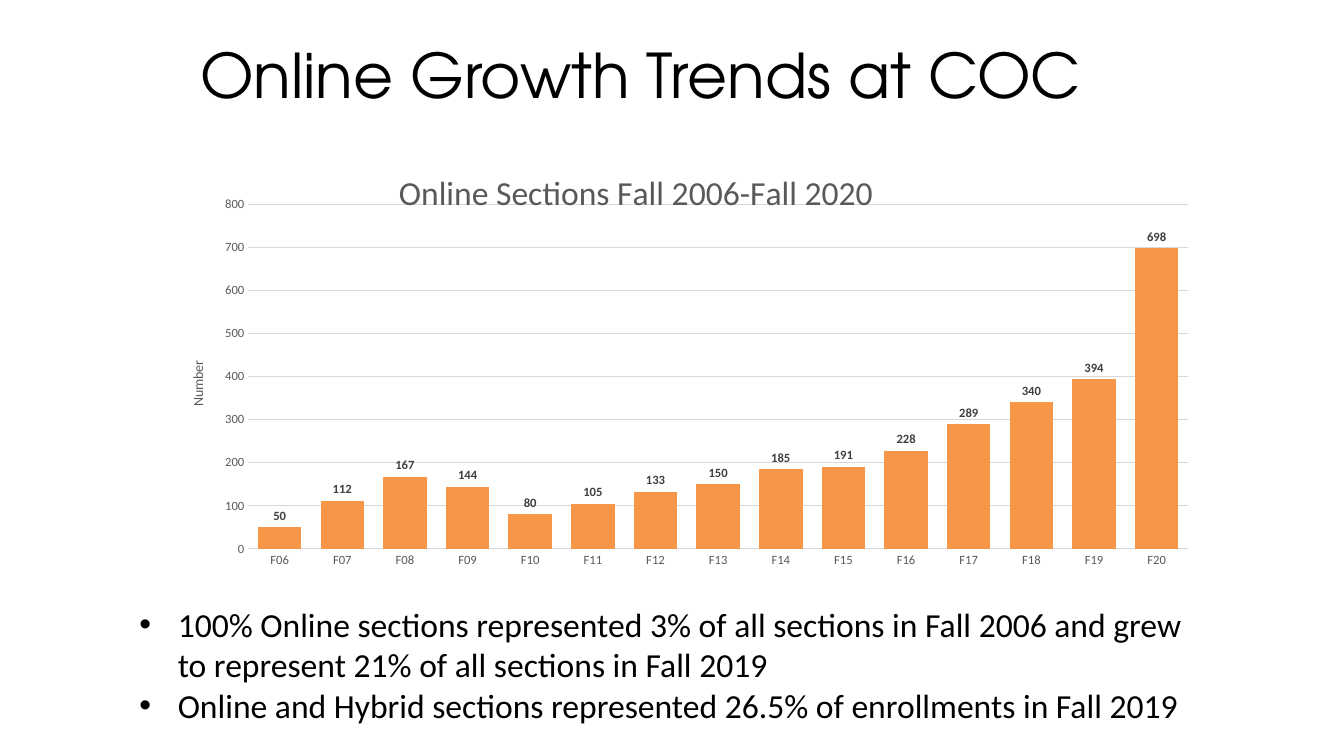
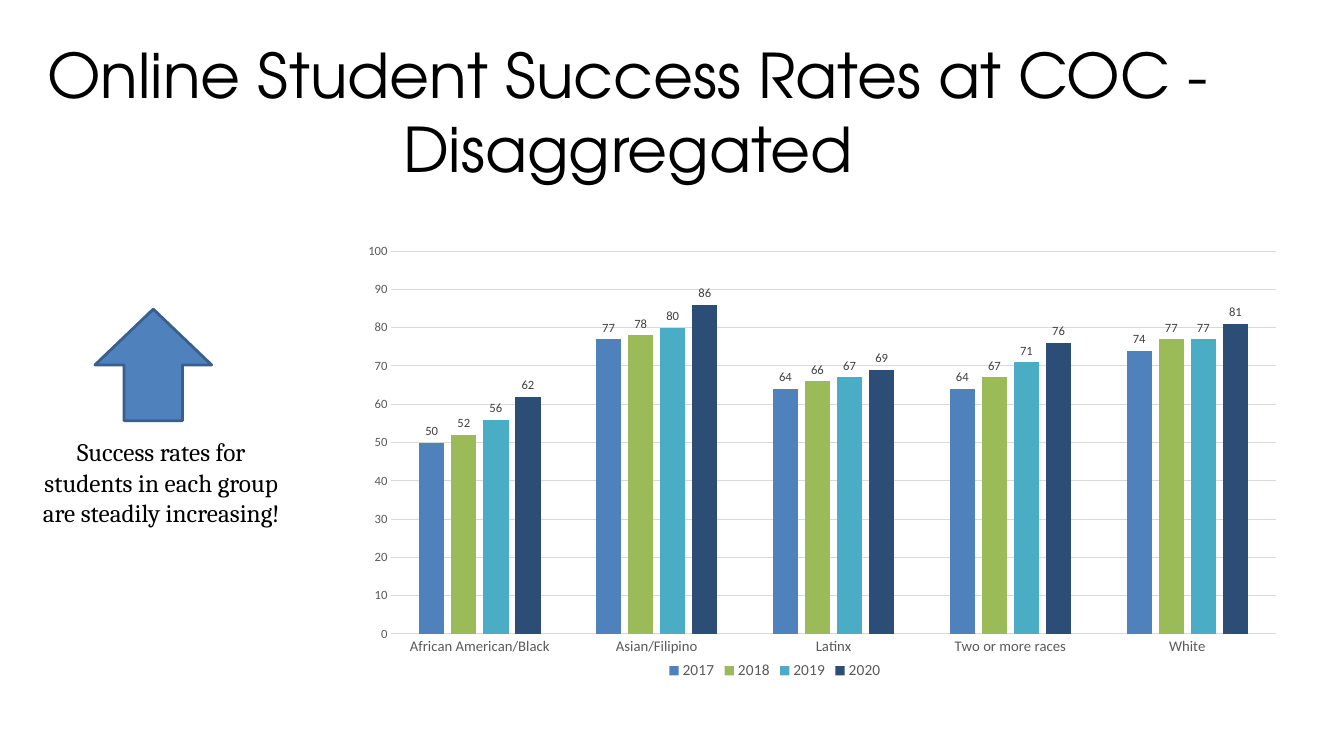
from dataclasses import dataclass
from typing import Any, Optional

from lxml import etree
from pptx import Presentation
from pptx import util as u
from pptx.chart.data import CategoryChartData
from pptx.dml.color import RGBColor
from pptx.enum import chart as ch, shapes, text
from pptx.oxml.ns import qn

WIDE, HIGH = u.Inches(13.33), u.Inches(7.5)
COLS, ROWS = 160, 90


@dataclass(frozen=True)
class Theme:
    """Colours, faces and type sizes that the slides share."""
    ink: str = "000000"
    grey: str = "595959"
    dark: str = "404040"
    rule: str = "D9D9D9"
    blue: str = "4F81BD"
    edge: str = "3A5F8C"
    green: str = "9BBB59"
    teal: str = "4BACC6"
    navy: str = "2C4D75"
    orange: str = "F79646"
    head: str = "TeX Gyre Adventor"
    body: str = "Calibri"
    serif: str = "Cambria"
    title: float = 44
    large: float = 24
    note: float = 18
    key: float = 11
    group: float = 10.5
    axis: float = 10
    small: float = 9


T = Theme()


@dataclass(frozen=True)
class Box:
    """A place given in columns and rows of the slide grid."""
    col: float
    row: float
    cols: float
    rows: float

    def emu(self) -> tuple[int, int, int, int]:
        """Turn grid cells into slide lengths."""
        return (round(self.col * WIDE / COLS), round(self.row * HIGH / ROWS),
                round(self.cols * WIDE / COLS), round(self.rows * HIGH / ROWS))


@dataclass(frozen=True)
class Series:
    """One run of bars."""
    name: str
    color: str
    vals: tuple[int, ...]


@dataclass(frozen=True)
class Graph:
    """A column chart with its scale and layout."""
    box: Box
    cats: list[str]
    runs: list[Series]
    top: int
    step: int
    gap: int
    plot: dict[str, float]
    size: float = T.small
    bold: bool = False
    title: Optional[str] = None
    side: Optional[str] = None
    key: bool = False


def rgb(code: str) -> RGBColor:
    """Read a colour code."""
    return RGBColor.from_string(code)


def style(font: Any, size: float, color: str = T.grey, face: str = T.body,
          bold: bool = False) -> None:
    """Format a font."""
    font.size, font.name, font.bold = u.Pt(size), face, bold
    font.color.rgb = rgb(color)


def write(frame: Any, lines: list[str], size: float, face: str = T.body,
          color: str = T.ink, align: Any = None, inset: Optional[float] = None,
          bullet: Optional[str] = None) -> None:
    """Fill a text frame with formatted paragraphs."""
    frame.word_wrap = True
    frame.auto_size = text.MSO_AUTO_SIZE.SHAPE_TO_FIT_TEXT
    frame.vertical_anchor = text.MSO_ANCHOR.TOP
    if inset is not None:
        frame.margin_left = frame.margin_right = u.Inches(inset)
        frame.margin_top = frame.margin_bottom = u.Inches(inset)
    for i, line in enumerate(lines):
        para = frame.add_paragraph() if i else frame.paragraphs[0]
        para.alignment = align
        para.space_before = u.Pt(0)
        if bullet:
            props = para._p.get_or_add_pPr()
            props.set("marL", str(u.Inches(0.38)))
            props.set("indent", str(-u.Inches(0.38)))
            etree.SubElement(props, qn("a:buFont")).set("typeface", "Arial")
            etree.SubElement(props, qn("a:buChar")).set("char", bullet)
        run = para.add_run()
        run.text = line
        style(run.font, size, color, face)


def place(shape: Any, box: Box) -> None:
    """Move a shape onto the grid."""
    shape.left, shape.top, shape.width, shape.height = box.emu()


def head(slide: Any, words: str, box: Box) -> None:
    """Set the slide title."""
    place(slide.shapes.title, box)
    write(slide.shapes.title.text_frame, [words], T.title, face=T.head,
          align=text.PP_ALIGN.CENTER, inset=0)


def pin(node: Any, spot: int, inner: bool = False, **share: float) -> None:
    """Fix a chart part at shares of the chart area."""
    lay = node.find(qn("c:layout"))
    if lay is None:
        lay = etree.Element(qn("c:layout"))
        node.insert(spot, lay)
    man = etree.SubElement(lay, qn("c:manualLayout"))
    if inner:
        etree.SubElement(man, qn("c:layoutTarget")).set("val", "inner")
    for name in ("x", "y"):
        etree.SubElement(man, qn(f"c:{name}Mode")).set("val", "edge")
    for name, val in share.items():
        etree.SubElement(man, qn(f"c:{name}")).set("val", str(val))


def label(owner: Any, words: str, size: float) -> None:
    """Write a chart or axis title."""
    run = owner.text_frame.paragraphs[0].add_run()
    run.text = words
    style(run.font, size)


def draw(slide: Any, g: Graph) -> None:
    """Draw a column chart."""
    data = CategoryChartData()
    data.categories = g.cats
    for run in g.runs:
        data.add_series(run.name, run.vals)
    chart = slide.shapes.add_chart(
        ch.XL_CHART_TYPE.COLUMN_CLUSTERED, *g.box.emu(), data).chart
    style(chart.font, T.axis, T.ink)
    root = chart.element
    plot = chart.plots[0]
    plot.gap_width, plot.overlap = g.gap, -27
    plot.vary_by_categories = False
    for bars, run in zip(plot.series, g.runs):
        bars.format.fill.solid()
        bars.format.fill.fore_color.rgb = rgb(run.color)
        tags = bars.data_labels
        tags.show_value = True
        tags.position = ch.XL_LABEL_POSITION.OUTSIDE_END
        style(tags.font, T.small, T.dark, bold=g.bold)
    cat, val = chart.category_axis, chart.value_axis
    for axis, size in ((cat, g.size), (val, T.small)):
        axis.major_tick_mark = axis.minor_tick_mark = ch.XL_TICK_MARK.NONE
        style(axis.tick_labels.font, size)
    val.minimum_scale, val.maximum_scale, val.major_unit = 0, g.top, g.step
    val.has_major_gridlines = True
    val.format.line.fill.background()
    for line in (cat.format.line, val.major_gridlines.format.line):
        line.color.rgb, line.width = rgb(T.rule), u.Pt(0.75)
    chart.has_title = bool(g.title)
    if g.title:
        label(chart.chart_title, g.title, T.large)
        pin(root.xpath("c:chart/c:title")[0], 1, x=0.23, y=0.04)
    if g.side:
        label(val.axis_title, g.side, T.axis)
        pin(root.xpath(".//c:valAx/c:title")[0], 1, x=0.03, y=0.47)
    chart.has_legend = g.key
    if g.key:
        chart.legend.position = ch.XL_LEGEND_POSITION.BOTTOM
        chart.legend.include_in_layout = False
        style(chart.legend.font, T.key)
        pin(root.xpath(".//c:legend")[0], 1, x=0.34, y=0.94)
    pin(root.xpath(".//c:plotArea")[0], 0, inner=True, **g.plot)


def growth(deck: Any) -> None:
    """Build the slide on section growth."""
    slide = deck.slides.add_slide(deck.slide_layouts[1])
    head(slide, "Online Growth Trends at COC", Box(8, 4.4, 136.6, 8.9))
    draw(slide, Graph(
        Box(18.5, 17.3, 123, 54), [f"F{y:02d}" for y in range(6, 21)],
        [Series("Series 1", T.orange,
                (50, 112, 167, 144, 80, 105, 133, 150, 185, 191, 228, 289,
                 340, 394, 698))],
        top=800, step=100, gap=44, bold=True,
        plot=dict(x=0.09, y=0.13, w=0.91, h=0.76),
        title="Online Sections Fall 2006-Fall 2020", side="Number"))
    body = slide.placeholders[1]
    place(body, Box(15.4, 71.3, 129.2, 15.7))
    write(body.text_frame, [
        "100% Online sections represented 3% of all sections in Fall 2006 "
        "and grew to represent 21% of all sections in Fall 2019",
        "Online and Hybrid sections represented 26.5% of enrollments in "
        "Fall 2019"], T.large, bullet="•")


def success(deck: Any) -> None:
    """Build the slide on success rates."""
    slide = deck.slides.add_slide(deck.slide_layouts[5])
    head(slide, "Online Student Success Rates at COC - Disaggregated",
         Box(5, 4.4, 139.6, 17.8))
    draw(slide, Graph(
        Box(41, 26, 112, 55.6),
        ["African American/Black", "Asian/Filipino", "Latinx",
         "Two or more races", "White"],
        [Series("2017", T.blue, (50, 77, 64, 64, 74)),
         Series("2018", T.green, (52, 78, 66, 67, 77)),
         Series("2019", T.teal, (56, 80, 67, 71, 77)),
         Series("2020", T.navy, (62, 86, 69, 76, 81))],
        top=100, step=10, gap=219, size=T.group, key=True,
        plot=dict(x=0.05, y=0.07, w=0.94, h=0.82)))
    group = slide.shapes.add_group_shape().shapes
    arrow = group.add_shape(shapes.MSO_SHAPE.UP_ARROW,
                            *Box(11.3, 36.8, 13.9, 13.3).emu())
    arrow.shadow.inherit = False
    arrow.fill.solid()
    arrow.fill.fore_color.rgb = rgb(T.blue)
    arrow.line.color.rgb, arrow.line.width = rgb(T.edge), u.Pt(2)
    note = group.add_textbox(*Box(3, 51.4, 32.4, 19.4).emu())
    write(note.text_frame,
          ["Success rates for students in each group are steadily "
           "increasing!"], T.note, face=T.serif, align=text.PP_ALIGN.CENTER)


def main() -> None:
    """Build and save the deck."""
    deck = Presentation()
    deck.slide_width, deck.slide_height = WIDE, HIGH
    growth(deck)
    success(deck)
    deck.save("out.pptx")


if __name__ == "__main__":
    main()
